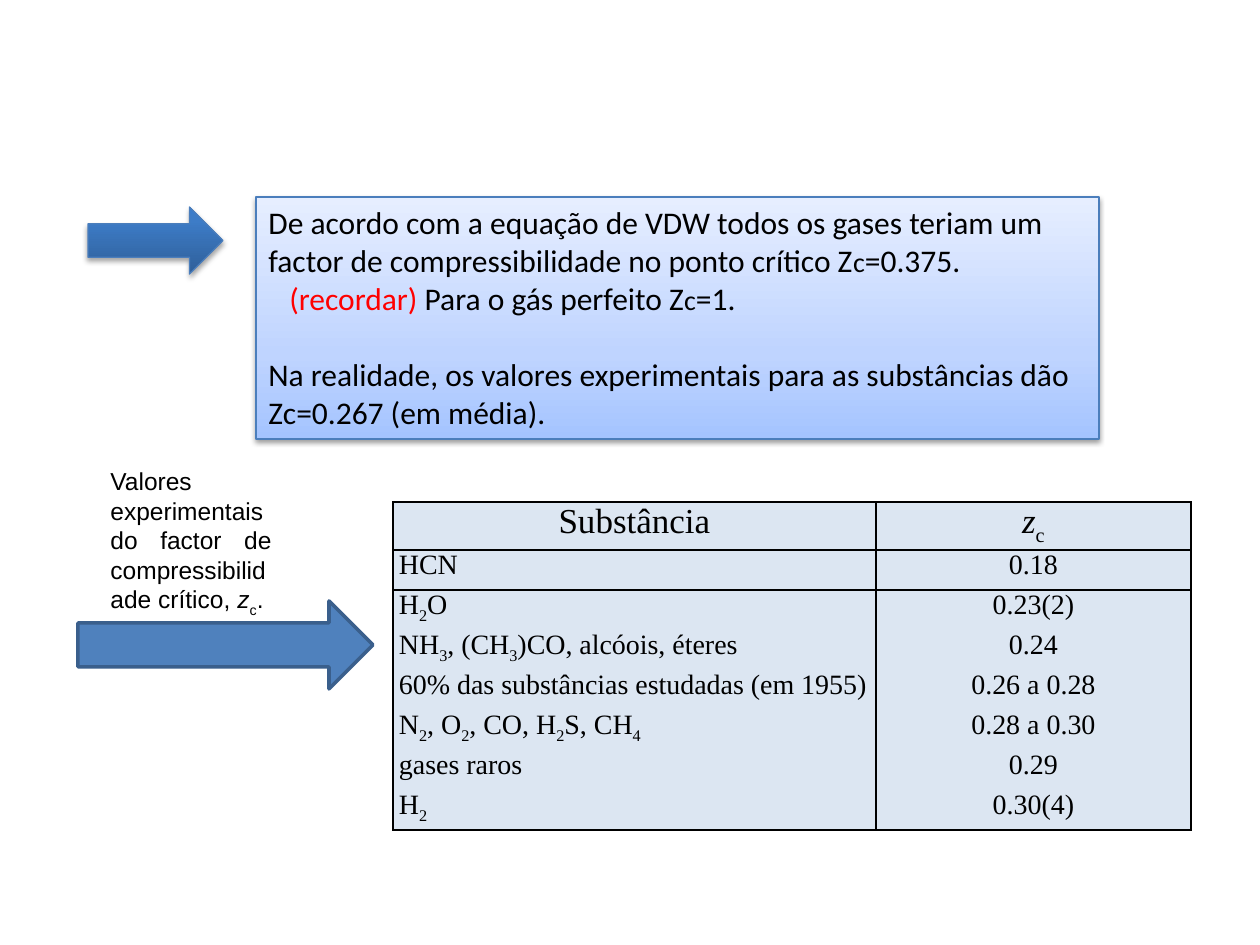
from lxml import etree
from pptx import Presentation
from pptx.dml.color import RGBColor
from pptx.enum.shapes import MSO_SHAPE
from pptx.enum.text import MSO_ANCHOR, MSO_AUTO_SIZE, PP_ALIGN
from pptx.oxml import parse_xml
from pptx.oxml.ns import qn
from pptx.util import Pt

PX = 914400 // 126
NS = 'xmlns:a="http://schemas.openxmlformats.org/drawingml/2006/main"'
BLACK = RGBColor(0, 0, 0)
RED = RGBColor(0xFF, 0, 0)
ARROW_FILL = RGBColor(0x4F, 0x81, 0xBD)
ARROW_EDGE = RGBColor(0x3A, 0x5F, 0x8C)
SOFT_EDGE = RGBColor(0x4B, 0x7E, 0xBC)
CELL_FILL = RGBColor(0xDC, 0xE6, 0xF2)

# Content: each paragraph is a list of (text, format values)
SMALL = {"size": Pt(16)}
STATEMENT = [
    [("De acordo com a equação de VDW todos os gases teriam um", {})],
    [("factor de compressibilidade no ponto crítico Z", {}), ("c", SMALL), ("=0.375.", {})],
    [("(recordar)", {"color": RED}), (" Para o gás perfeito Z", {}), ("c", SMALL), ("=1.", {})],
    [("Na realidade, os valores experimentais para as substâncias dão", {})],
    [("Zc=0.267 (em média).", {})],
]
RECALL, REALITY = 2, 3
CAPTION = [
    ("Valores experimentais do factor de compressibilidade crítico, ", {}),
    ("z", {"italic": True}), ("c", {"baseline": -30}), (".", {}),
]
HEADER = ([("Substância", {})], [("z", {"italic": True}), ("c", {"baseline": -25})])
# Underscores enclose subscripts
FACTORS = [
    ("HCN", "0.18"),
    ("H_2_O", "0.23(2)"),
    ("NH_3_, (CH_3_)CO, alcóois, éteres", "0.24"),
    ("60% das substâncias estudadas (em 1955)", "0.26 a 0.28"),
    ("N_2_, O_2_, CO, H_2_S, CH_4_", "0.28 a 0.30"),
    ("gases raros", "0.29"),
    ("H_2_", "0.30(4)"),
]

# Places in px: left, top, width, height
TOP_ARROW = (88, 207, 135, 67)
STATEMENT_BOX = (256, 197, 843, 242)
LOWER_ARROW = (78, 601, 295, 88)
CAPTION_BOX = (98, 462, 186, 161)
TABLE_LEFT, TABLE_TOP = 393, 502
COLUMN_WIDTHS = (483, 315)
HEADER_HEIGHT, ROW_HEIGHT = 48, 40


def place(box):
    return [PX * length for length in box]


def write(paragraph, runs, font, size):
    for text, values in runs:
        run = paragraph.add_run()
        run.text = text
        values = {"name": font, "size": Pt(size), "color": BLACK, **values}
        run.font.color.rgb = values.pop("color")
        baseline = values.pop("baseline", 0)
        if baseline:
            run.font._element.set("baseline", str(baseline * 1000))
        for key, value in values.items():
            setattr(run.font, key, value)


def subscripted(text):
    return [(part, {"baseline": -25} if i % 2 else {})
            for i, part in enumerate(text.split("_")) if part]


def add_panel(slide, kind, box, edge, width):
    panel = slide.shapes.add_shape(kind, *place(box))
    panel.shadow.inherit = False
    panel.line.color.rgb = edge
    panel.line.width = Pt(width)
    return panel


def shade(panel, stops, opacity, distance):
    """Vertical gradient and a soft shadow below."""
    panel.fill.gradient()
    panel.fill.gradient_angle = 90
    properties = panel._element.spPr
    stop_list = properties.find(".//" + qn("a:gsLst"))
    for stop in list(stop_list):
        stop_list.remove(stop)
    for position, color in stops:
        stop_list.append(parse_xml(
            f'<a:gs {NS} pos="{position * 1000}"><a:srgbClr val="{color}"/></a:gs>'))
    properties.find(qn("a:effectLst")).append(parse_xml(
        f'<a:outerShdw {NS} blurRad="{Pt(3.1)}" dist="{Pt(distance)}" dir="5400000" '
        f'rotWithShape="0"><a:srgbClr val="000000"><a:alpha val="{opacity * 1000}"/>'
        '</a:srgbClr></a:outerShdw>'))


def border(cell, sides):
    properties = cell._tc.get_or_add_tcPr()
    for index, side in enumerate(s for s in "LRTB" if s in sides):
        properties.insert(index, parse_xml(
            f'<a:ln{side} {NS} w="{Pt(1)}"><a:solidFill><a:srgbClr val="000000"/>'
            f'</a:solidFill></a:ln{side}>'))


def fill_cell(cell, runs, size, align, sides):
    margins = {"margin_left": 6 * PX, "margin_right": 6 * PX,
               "margin_top": 0, "margin_bottom": 0}
    for key, value in margins.items():
        setattr(cell, key, value)
    cell.fill.solid()
    cell.fill.fore_color.rgb = CELL_FILL
    paragraph = cell.text_frame.paragraphs[0]
    paragraph.alignment = align
    write(paragraph, runs, "Times New Roman", size)
    border(cell, sides)


def add_factor_table(slide):
    count = len(FACTORS)
    box = (TABLE_LEFT, TABLE_TOP, sum(COLUMN_WIDTHS), HEADER_HEIGHT + count * ROW_HEIGHT)
    table = slide.shapes.add_table(count + 1, 2, *place(box)).table
    table.first_row = table.horz_banding = False
    # "No style, no grid"
    table._tbl.tblPr.find(qn("a:tableStyleId")).text = "{2D5ABB26-0587-4C30-8999-92F81FD0307C}"
    for column, width in zip(table.columns, COLUMN_WIDTHS):
        column.width = width * PX
    for index, row in enumerate(table.rows):
        row.height = (ROW_HEIGHT if index else HEADER_HEIGHT) * PX
    for column, runs in enumerate(HEADER):
        fill_cell(table.cell(0, column), runs, 20, PP_ALIGN.CENTER, "LRTB")
    for row, record in enumerate(FACTORS, 1):
        sides = "LR" + ("T" if row == 1 else "") + ("B" if row == count else "")
        for column, text in enumerate(record):
            align = PP_ALIGN.CENTER if column else PP_ALIGN.LEFT
            fill_cell(table.cell(row, column), subscripted(text), 16, align, sides)


def main():
    deck = Presentation()
    deck.slide_width, deck.slide_height = place((1260, 945))
    slide = deck.slides.add_slide(deck.slide_layouts[6])

    # Upper arrow and statement
    arrow = add_panel(slide, MSO_SHAPE.RIGHT_ARROW, TOP_ARROW, SOFT_EDGE, 0.75)
    shade(arrow, [(0, "2F5F99"), (80, "3D7CC7"), (100, "3A7CCB")], 35, 1.8)
    statement = add_panel(slide, MSO_SHAPE.RECTANGLE, STATEMENT_BOX, SOFT_EDGE, 0.75)
    shade(statement, [(0, "A4C4FF"), (35, "BFD4FF"), (100, "E6EEFF")], 38, 1.6)
    frame = statement.text_frame
    frame.word_wrap = False
    frame.auto_size = MSO_AUTO_SIZE.SHAPE_TO_FIT_TEXT
    frame.vertical_anchor = MSO_ANCHOR.TOP
    for index, runs in enumerate(STATEMENT):
        paragraph = frame.add_paragraph() if index else frame.paragraphs[0]
        paragraph.alignment = PP_ALIGN.LEFT
        write(paragraph, runs, "Calibri", 18)
    frame.paragraphs[RECALL]._p.get_or_add_pPr().set("marL", str(21 * PX))
    frame.paragraphs[REALITY].space_before = Pt(22)

    add_factor_table(slide)

    # Lower arrow and caption
    pointer = add_panel(slide, MSO_SHAPE.RIGHT_ARROW, LOWER_ARROW, ARROW_EDGE, 2)
    pointer.fill.solid()
    pointer.fill.fore_color.rgb = ARROW_FILL
    caption = slide.shapes.add_textbox(*place(CAPTION_BOX)).text_frame
    caption.word_wrap = True
    caption.auto_size = MSO_AUTO_SIZE.SHAPE_TO_FIT_TEXT
    caption.vertical_anchor = MSO_ANCHOR.MIDDLE
    caption.paragraphs[0].alignment = PP_ALIGN.JUSTIFY
    write(caption.paragraphs[0], CAPTION, "Arial", 14)

    deck.save("out.pptx")


if __name__ == "__main__":
    main()
